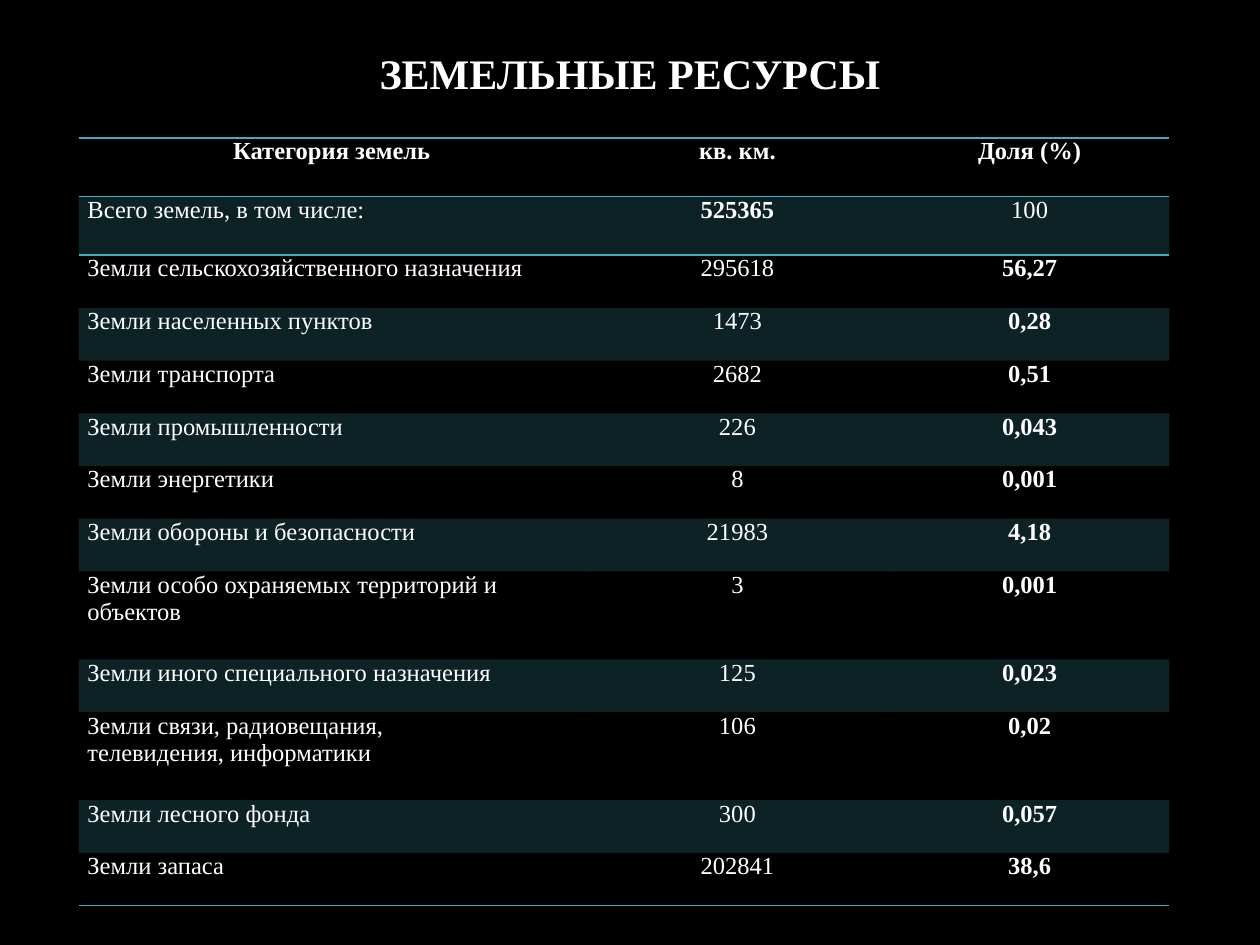
from lxml import etree
from pptx import Presentation
from pptx.dml.color import RGBColor
from pptx.enum import text
from pptx.oxml.ns import qn
from pptx.util import Pt

BLACK = RGBColor(0x00, 0x00, 0x00)
WHITE = RGBColor(0xFF, 0xFF, 0xFF)
TEAL = RGBColor(0x41, 0xAE, 0xBD)
NO_GRID_STYLE = "{2D5ABB26-0587-4C30-8999-92F81FD0307C}"
LEFT, CENTER = text.PP_ALIGN.LEFT, text.PP_ALIGN.CENTER


def write(tf, words, size=14, bold=False, align=CENTER, spacing=None):
    tf.text = words
    for p in tf.paragraphs:
        p.alignment = align
        p.line_spacing = spacing
        for r in p.runs:
            r.font.name = "Times New Roman"
            r.font.size = Pt(size)
            r.font.bold = bold
            r.font.color.rgb = WHITE


def add_border(cell, side):
    ln = etree.SubElement(cell._tc.get_or_add_tcPr(), qn(f"a:{side}"), w=str(Pt(1)))
    fill = etree.SubElement(ln, qn("a:solidFill"))
    etree.SubElement(fill, qn("a:srgbClr"), val=str(TEAL))


prs = Presentation()
prs.slide_width, prs.slide_height = Pt(720), Pt(540)
slide = prs.slides.add_slide(prs.slide_layouts[5])
slide.background.fill.solid()
slide.background.fill.fore_color.rgb = BLACK

# Title
title = slide.shapes.title
title.left, title.top, title.width, title.height = Pt(0), Pt(22.3), Pt(720), Pt(41.8)
title.text_frame.vertical_anchor = text.MSO_ANCHOR.MIDDLE
write(title.text_frame, "ЗЕМЕЛЬНЫЕ РЕСУРСЫ", size=24, bold=True, spacing=0.9)

# Table data: category, area, share
rows = [
    ("Категория земель", "кв. км.", "Доля (%)"),
    ("Всего земель, в том числе:", "525365", "100"),
    ("Земли сельскохозяйственного назначения", "295618", "56,27"),
    ("Земли населенных пунктов", "1473", "0,28"),
    ("Земли транспорта", "2682", "0,51"),
    ("Земли промышленности", "226", "0,043"),
    ("Земли энергетики", "8", "0,001"),
    ("Земли обороны и безопасности", "21983", "4,18"),
    ("Земли особо охраняемых территорий и объектов", "3", "0,001"),
    ("Земли иного специального назначения", "125", "0,023"),
    ("Земли связи, радиовещания,\nтелевидения, информатики", "106", "0,02"),
    ("Земли лесного фонда", "300", "0,057"),
    ("Земли запаса", "202841", "38,6"),
]
widths = [289.4, 174.2, 159.8]
heights = [33.5] * 2 + [30.15] * 6 + [50.3, 30.15] * 2 + [30.15]

# Table grid
frame = slide.shapes.add_table(len(rows), len(widths), Pt(44.9), Pt(78.8),
                               Pt(sum(widths)), Pt(sum(heights)))
table = frame.table
table._tbl.tblPr.find(qn("a:tableStyleId")).text = NO_GRID_STYLE
for column, width in zip(table.columns, widths):
    column.width = Pt(width)
for row, height in zip(table.rows, heights):
    row.height = Pt(height)

# Table cells
last = len(rows) - 1
for i, values in enumerate(rows):
    for j, value in enumerate(values):
        cell = table.cell(i, j)
        cell.margin_left = cell.margin_right = Pt(5.1)
        cell.margin_top = cell.margin_bottom = Pt(0)

        # The total row stresses the area, the rows below it the share
        bold = i == 0 or j == (1 if i == 1 else 2)
        write(cell.text_frame, value, bold=bold, align=LEFT if i and j == 0 else CENTER)

        # Rules around the header and under the last row
        if i in (0, 1):
            add_border(cell, "lnT")
        if i in (0, last):
            add_border(cell, "lnB")

        # Translucent bands on odd rows
        if i % 2:
            cell.fill.solid()
            cell.fill.fore_color.rgb = TEAL
            color = cell._tc.tcPr.find(qn("a:solidFill")).find(qn("a:srgbClr"))
            etree.SubElement(color, qn("a:alpha"), val="20000")
        else:
            cell.fill.background()

prs.save("out.pptx")
